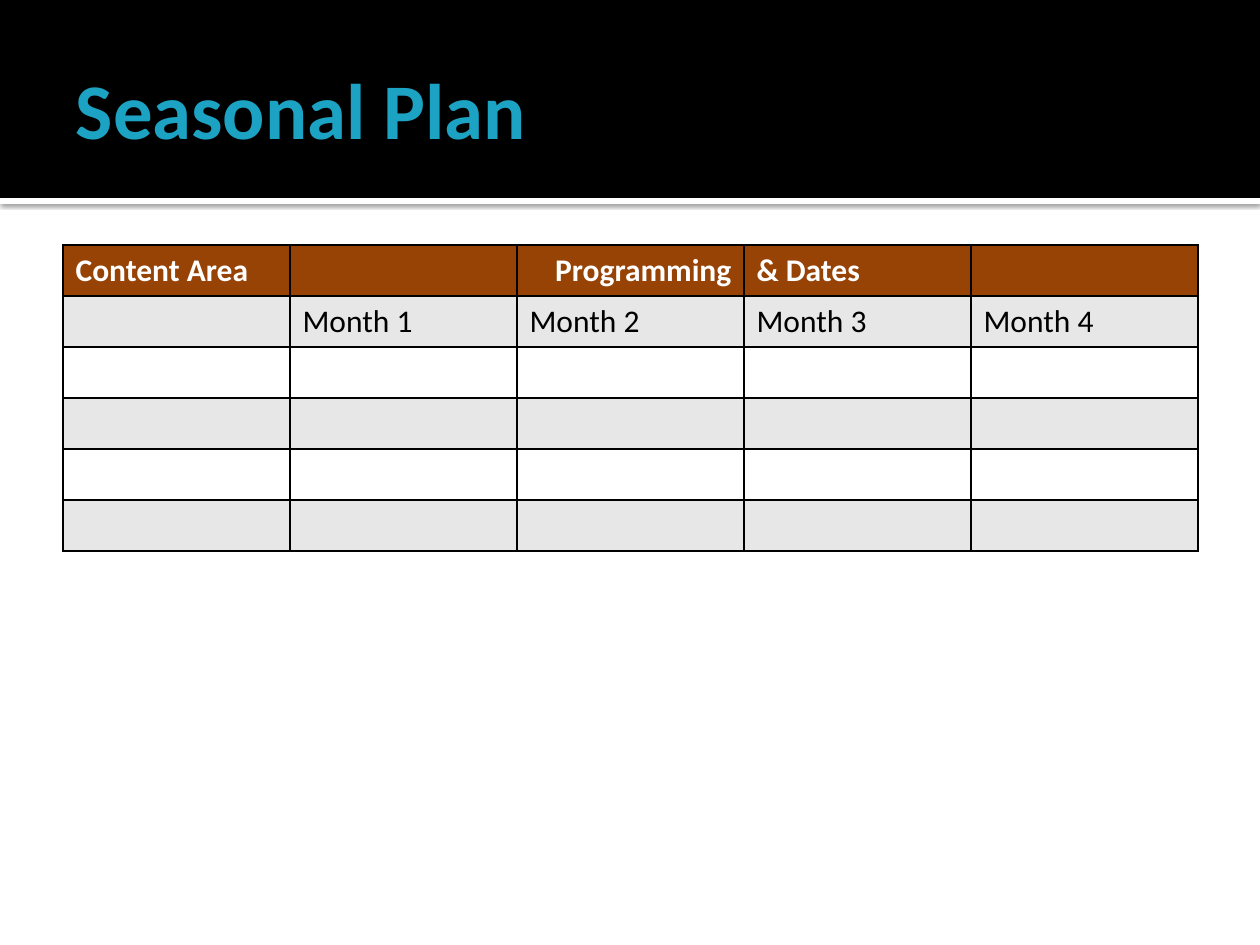
from lxml import etree
from pptx import Presentation
from pptx.dml.color import RGBColor
from pptx.enum.shapes import MSO_SHAPE
from pptx.enum.text import MSO_ANCHOR, PP_ALIGN
from pptx.oxml import parse_xml
from pptx.oxml.ns import nsdecls, qn
from pptx.util import Emu, Pt

BLACK = RGBColor(0x00, 0x00, 0x00)
WHITE = RGBColor(0xFF, 0xFF, 0xFF)
TEAL = RGBColor(0x1C, 0xA2, 0xC3)
BROWN = RGBColor(0x96, 0x43, 0x05)
GREY = RGBColor(0xE7, 0xE7, 0xE7)
FONT = "Calibri"

COLS, ROWS = 5, 6
COL_W, ROW_H = 227, 51
TEXTS = [
    ["Content Area", "", "Programming", "& Dates", ""],
    ["", "Month 1", "Month 2", "Month 3", "Month 4"],
]


def px(n):
    return Emu(round(n * 914400 / 126))


def style_font(p, size, color, bold):
    p.font.name = FONT
    p.font.size = Pt(size)
    p.font.bold = bold
    p.font.color.rgb = color


prs = Presentation()
prs.slide_width, prs.slide_height = px(1260), px(945)
s = prs.slides.add_slide(prs.slide_layouts[6])

# Header band with a shadowed white strip below it
for top, height, color in [(198, 6, WHITE), (0, 198, BLACK)]:
    band = s.shapes.add_shape(MSO_SHAPE.RECTANGLE, 0, px(top), px(1260), px(height))
    band.shadow.inherit = False
    band.fill.solid()
    band.fill.fore_color.rgb = color
    band.line.fill.background()
    if color == WHITE:
        effects = band._element.spPr.find(qn("a:effectLst"))
        effects.append(parse_xml(
            f'<a:outerShdw {nsdecls("a")} blurRad="31750" dist="10160" dir="5400000" '
            'algn="t" rotWithShape="0"><a:srgbClr val="000000">'
            '<a:alpha val="60000"/></a:srgbClr></a:outerShdw>'))

title = s.shapes.add_textbox(px(63), px(22), px(1134), px(172))
tf = title.text_frame
tf.word_wrap = True
tf.vertical_anchor = MSO_ANCHOR.MIDDLE
tf.margin_left = px(13)
tf.margin_right = tf.margin_top = tf.margin_bottom = px(6)
p = tf.paragraphs[0]
p.text = "Seasonal Plan"
style_font(p, 45, TEAL, True)

# Seasonal plan table
table = s.shapes.add_table(ROWS, COLS, px(63), px(245),
                           px(COLS * COL_W), px(ROWS * ROW_H)).table
for col in table.columns:
    col.width = px(COL_W)
for row in table.rows:
    row.height = px(ROW_H)

for r in range(ROWS):
    header = r == 0
    fill = BROWN if header else GREY if r % 2 else WHITE
    for c in range(COLS):
        cell = table.cell(r, c)
        tcPr = cell._tc.get_or_add_tcPr()
        for side in ("lnL", "lnR", "lnT", "lnB"):
            ln = etree.SubElement(tcPr, qn(f"a:{side}"), w=str(Pt(1)))
            solid = etree.SubElement(ln, qn("a:solidFill"))
            etree.SubElement(solid, qn("a:srgbClr"), val=str(BLACK))
        cell.fill.solid()
        cell.fill.fore_color.rgb = fill
        p = cell.text_frame.paragraphs[0]
        if r < len(TEXTS) and TEXTS[r][c]:
            p.text = TEXTS[r][c]
        style_font(p, 18, WHITE if header else BLACK, header)

table.cell(0, 2).text_frame.paragraphs[0].alignment = PP_ALIGN.RIGHT

prs.save("out.pptx")
